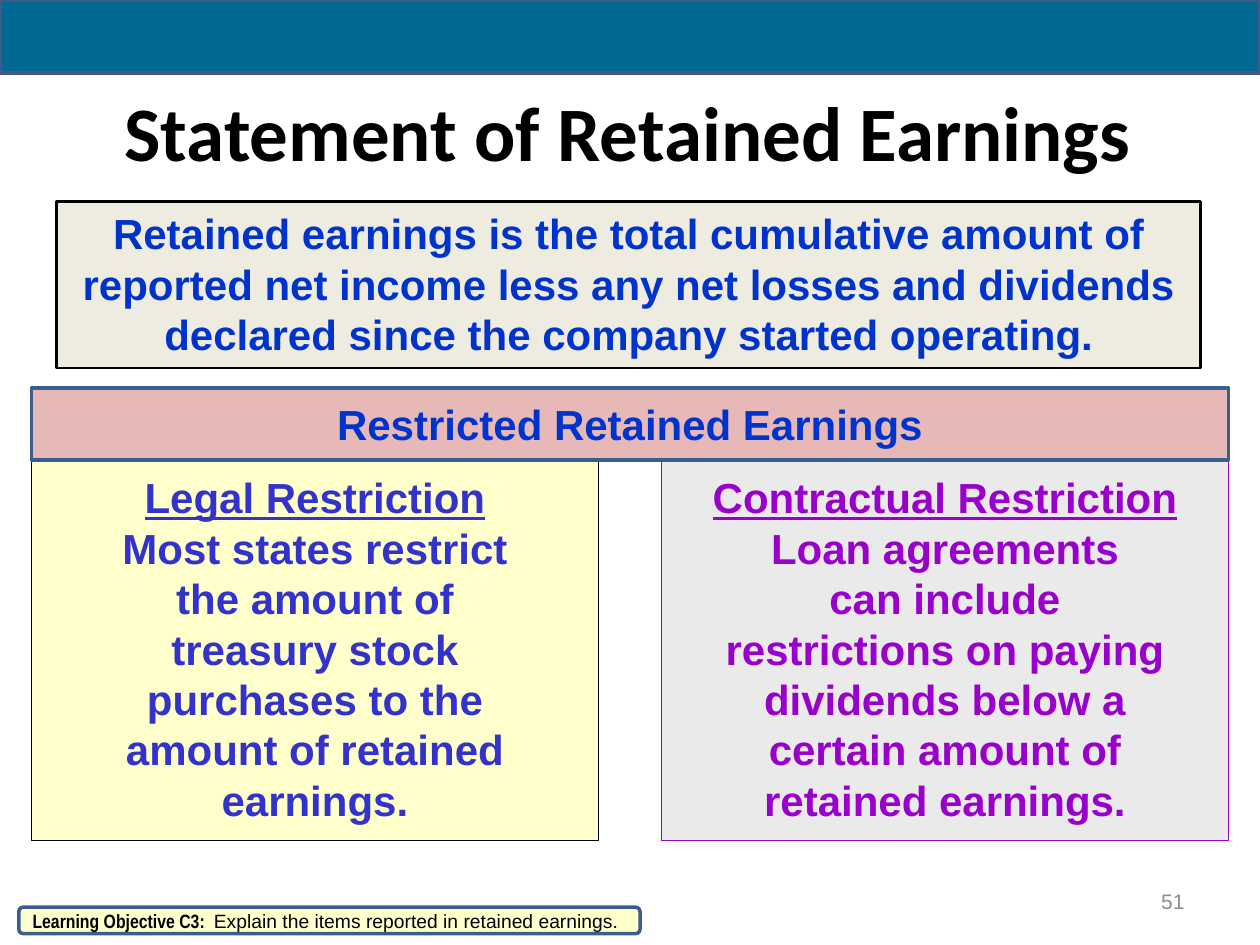
"""Build the slide on the statement of retained earnings."""
from dataclasses import dataclass

from pptx import Presentation
from pptx.dml.color import RGBColor
from pptx.enum.shapes import MSO_SHAPE as Shape
from pptx.enum.text import MSO_ANCHOR as Anchor, PP_ALIGN as Align
from pptx.util import Inches, Pt


@dataclass(frozen=True)
class Theme:
    columns: int = 100
    rows: int = 75
    black: str = "000000"
    blue: str = "0033CC"
    indigo: str = "3333CC"
    purple: str = "9900CC"
    gray: str = "8C8C8C"
    teal: str = "006991"
    slate: str = "475785"
    steel: str = "3A5F8C"
    cream: str = "FFFFCC"
    sand: str = "EEECE1"
    rose: str = "E6B9B8"
    silver: str = "EAEAEA"
    title_size: float = 44
    body_size: float = 24
    number_size: float = 12
    note_size: float = 11


class SlideBuilder:
    def __init__(self, deck, theme):
        self.theme = theme
        self.cell_width = deck.slide_width / theme.columns
        self.cell_height = deck.slide_height / theme.rows
        self.page = deck.slides.add_slide(deck.slide_layouts[5])

    def place(self, column, row, width, height):
        return [round(column * self.cell_width), round(row * self.cell_height),
                round(width * self.cell_width), round(height * self.cell_height)]

    def frame(self, box, anchor=Anchor.MIDDLE, wrap=True):
        values = {"word_wrap": wrap, "vertical_anchor": anchor,
                  "margin_left": Inches(0.1), "margin_right": Inches(0.1),
                  "margin_top": Inches(0.05), "margin_bottom": Inches(0.05)}
        for name, value in values.items():
            setattr(box.text_frame, name, value)
        return box.text_frame

    def span(self, para, text, size, color, font="Arial", bold=True, underline=False):
        span = para.add_run()
        span.text = text
        values = {"name": font, "size": Pt(size), "bold": bold, "underline": underline}
        for name, value in values.items():
            setattr(span.font, name, value)
        span.font.color.rgb = RGBColor.from_string(color)

    def title(self, cells, text):
        box = self.page.shapes.title
        for name, value in zip(("left", "top", "width", "height"), self.place(*cells)):
            setattr(box, name, value)
        para = self.frame(box).paragraphs[0]
        para.alignment = Align.CENTER
        self.span(para, text, self.theme.title_size, self.theme.black, "Calibri")

    def panel(self, cells, fill, line, weight, kind=Shape.RECTANGLE):
        box = self.page.shapes.add_shape(kind, *self.place(*cells))
        box.shadow.inherit = False
        box.fill.solid()
        box.fill.fore_color.rgb = RGBColor.from_string(fill)
        box.line.color.rgb = RGBColor.from_string(line)
        box.line.width = Pt(weight)
        return box

    def statement(self, box, text, anchor=Anchor.MIDDLE):
        para = self.frame(box, anchor).paragraphs[0]
        para.alignment = Align.CENTER
        self.span(para, text, self.theme.body_size, self.theme.blue)

    def restriction(self, box, heading, lines, color, wrap=True):
        frame = self.frame(box, wrap=wrap)
        for index, line in enumerate(lines):
            para = frame.add_paragraph() if index else frame.paragraphs[0]
            para.alignment = Align.CENTER
            if not index:
                self.span(para, heading, self.theme.body_size, color, underline=True)
                para.add_line_break()
            self.span(para, line, self.theme.body_size, color)

    def objective(self, box, label, text):
        para = self.frame(box).paragraphs[0]
        para.alignment = Align.LEFT
        size, color = self.theme.note_size, self.theme.black
        self.span(para, label, size, color, "Arial Narrow")
        self.span(para, text, size, color, bold=False)

    def number(self, cells, text):
        box = self.page.shapes.add_textbox(*self.place(*cells))
        para = self.frame(box).paragraphs[0]
        para.alignment = Align.RIGHT
        self.span(para, text, self.theme.number_size, self.theme.gray, bold=False)


def main():
    deck = Presentation()
    deck.slide_width, deck.slide_height = Inches(10), Inches(7.5)
    theme = Theme()
    slide = SlideBuilder(deck, theme)

    slide.title((3.2, 5.8, 93.3, 9.2), "Statement of Retained Earnings")
    definition = slide.panel((4.5, 16, 90.8, 13.2), theme.sand, theme.black, 1.5)
    slide.statement(
        definition,
        "Retained earnings is the total cumulative amount of reported net income "
        "less any net losses and dividends declared since the company started operating.",
        Anchor.TOP)

    restrictions = (
        ("Legal Restriction", theme.indigo, theme.cream, theme.black, False,
         ("Most states restrict", "the amount of", "treasury stock",
          "purchases to the", "amount of retained", "earnings.")),
        ("Contractual Restriction", theme.purple, theme.silver, theme.purple, True,
         ("Loan agreements", "can include", "restrictions on paying",
          "dividends below a", "certain amount of", "retained earnings.")),
    )
    margin, width, gap = 2.5, 45, 5
    for index, (heading, color, fill, line, wrap, lines) in enumerate(restrictions):
        left = margin + index * (width + gap)
        box = slide.panel((left, 36.2, width, 30.5), fill, line, 1)
        slide.restriction(box, heading, lines, color, wrap)

    banner = slide.panel((margin, 30.8, 2 * width + gap, 5.7), theme.rose, theme.steel, 2)
    slide.statement(banner, "Restricted Retained Earnings")
    slide.panel((0, 0, theme.columns, 5.8), theme.teal, theme.slate, 2.25)
    slide.number((71.7, 69.5, 23.3, 4), "51")
    footer = slide.panel((1.5, 72, 49.3, 2.1), theme.cream, theme.steel, 2,
                         Shape.ROUNDED_RECTANGLE)
    slide.objective(footer, "Learning Objective C3:  ",
                    "Explain the items reported in retained earnings.")
    deck.save("out.pptx")


if __name__ == "__main__":
    main()
